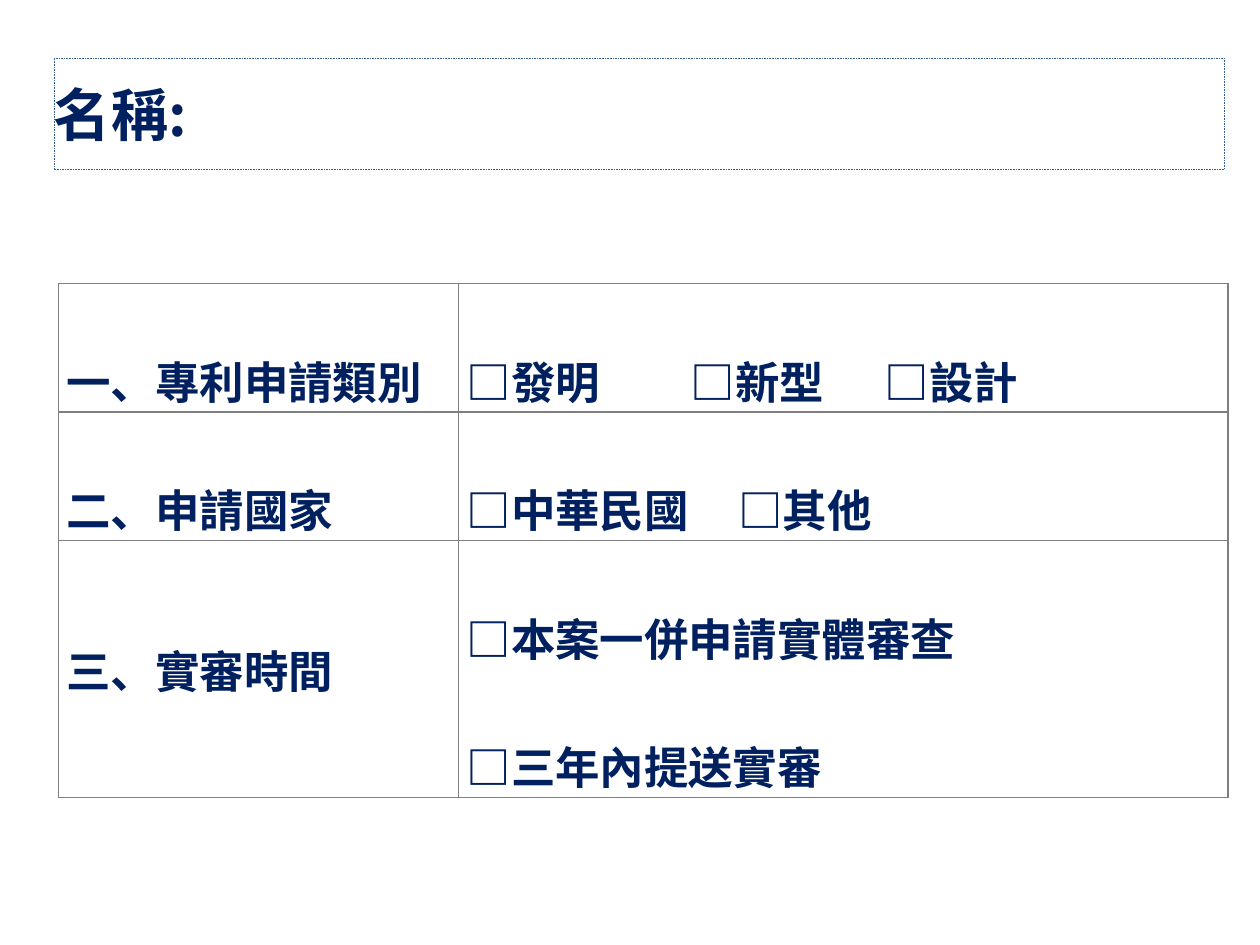
from lxml import etree
from pptx import Presentation
from pptx import util as u
from pptx.dml.color import RGBColor
from pptx.enum import dml, shapes, text
from pptx.oxml import ns

COLORS = {"navy": "002060", "blue": "376092", "grey": "7F7F7F"}
FONT = "Noto Sans CJK SC"
COLUMN_WIDTHS = (8.89, 17.1)
ROW_HEIGHTS = (2.31, 2.31, 4.6)

# Each cell: line spacing, tab stops in cm, paragraphs made of (text, underline) spans
FORM_ROWS = [
    [(2, [], [[("一、專利申請類別", False)]]),
     (2, [4.98, 9.29], [[("□發明\t□新型\t□設計", False)]])],
    [(2, [], [[("二、申請國家", False)]]),
     (2, [6.04, 14.93], [[("□中華民國\t□其他", False), ("\t", True)]])],
    [(2.5, [], [[("三、實審時間", False)]]),
     (2, [], [[("□本案一併申請實體審查", False)], [("□三年內提送實審", False)]])],
]


def color(name):
    return RGBColor.from_string(COLORS[name])


def add_child(parent, tag, **attributes):
    return etree.SubElement(parent, ns.qn(tag), attributes)


def add_span(para, words, size=28, underline=False):
    span = para.add_run()
    span.text = words
    font = span.font
    font.size, font.bold, font.name = u.Pt(size), True, FONT
    font.color.rgb = color("navy")
    if underline:
        font.underline = True
    add_child(span._r.get_or_add_rPr(), "a:ea", typeface=FONT)


def set_tabs(para, stops):
    if stops:
        tabs = add_child(para._p.get_or_add_pPr(), "a:tabLst")
        for stop in stops:
            add_child(tabs, "a:tab", pos=str(u.Cm(stop)), algn="l")


def set_borders(cell):
    properties = cell._tc.get_or_add_tcPr()
    for index, side in enumerate(("a:lnL", "a:lnR", "a:lnT", "a:lnB")):
        border = etree.Element(ns.qn(side), w=str(u.Pt(1)))
        fill = add_child(border, "a:solidFill")
        add_child(fill, "a:srgbClr", val=COLORS["grey"])
        properties.insert(index, border)


def fill_cell(cell, spacing, stops, paragraphs):
    cell.fill.background()
    cell.margin_left = cell.margin_right = u.Cm(0.18)
    cell.margin_top = cell.margin_bottom = 0
    set_borders(cell)
    frame = cell.text_frame
    for index, spans in enumerate(paragraphs):
        para = frame.add_paragraph() if index else frame.paragraphs[0]
        set_tabs(para, stops)
        para.line_spacing = spacing
        for words, underline in spans:
            add_span(para, words, underline=underline)


def add_form_table(page):
    table = page.shapes.add_table(
        len(ROW_HEIGHTS), len(COLUMN_WIDTHS), u.Cm(1.3), u.Cm(6.3),
        u.Cm(sum(COLUMN_WIDTHS)), u.Cm(sum(ROW_HEIGHTS))).table
    table.first_row = table.horz_banding = False
    for column, width in zip(table.columns, COLUMN_WIDTHS):
        column.width = u.Cm(width)
    for row, height, contents in zip(table.rows, ROW_HEIGHTS, FORM_ROWS):
        row.height = u.Cm(height)
        for cell, content in zip(row.cells, contents):
            fill_cell(cell, *content)


def add_name_box(page):
    box = page.shapes.add_shape(
        shapes.MSO_SHAPE.RECTANGLE, u.Cm(1.2), u.Cm(1.3), u.Cm(26.01), u.Cm(2.47))
    box.shadow.inherit = False
    box.fill.background()
    box.line.color.rgb = color("blue")
    box.line.width = u.Pt(0.5)
    box.line.dash_style = dml.MSO_LINE.ROUND_DOT
    frame = box.text_frame
    frame.margin_left = frame.margin_right = frame.margin_top = frame.margin_bottom = 0
    frame.vertical_anchor = text.MSO_ANCHOR.MIDDLE
    para = frame.paragraphs[0]
    para.alignment = text.PP_ALIGN.LEFT
    add_span(para, "名稱:", size=36)


def main():
    deck = Presentation()
    deck.slide_width, deck.slide_height = u.Cm(28), u.Cm(21)
    page = deck.slides.add_slide(deck.slide_layouts[6])
    # Application form
    add_form_table(page)
    # Name field
    add_name_box(page)
    deck.save("out.pptx")


if __name__ == "__main__":
    main()
